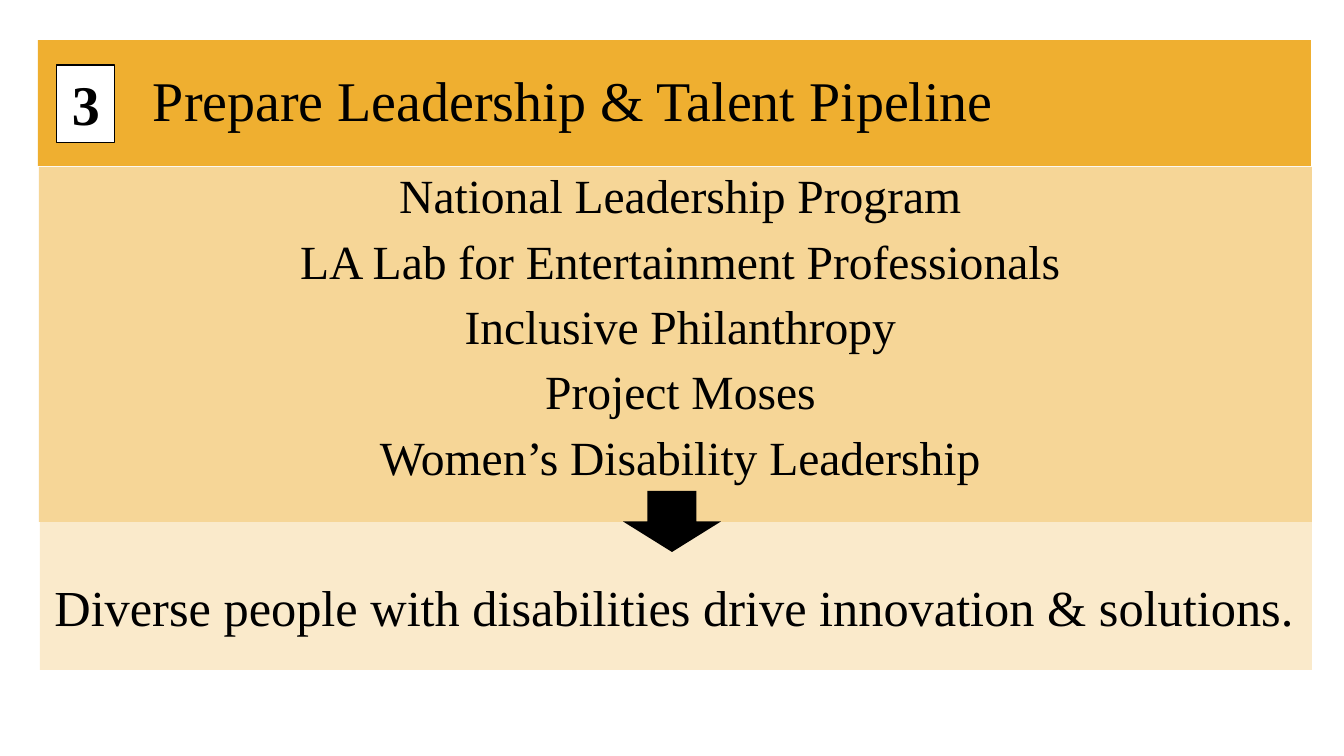
from lxml import etree
from pptx import Presentation
from pptx.dml.color import RGBColor
from pptx.enum.shapes import MSO_SHAPE as Preset
from pptx.enum.text import MSO_ANCHOR as Anchor, PP_ALIGN as Align
from pptx.oxml.ns import qn
from pptx.util import Pt

PX = 914400 / 100.8
GOLD, BLACK, WHITE = "EFAF30", "000000", "FFFFFF"
FONT = "Times New Roman"
PROGRAMS = [
    "National Leadership Program",
    "LA Lab for Entertainment Professionals",
    "Inclusive Philanthropy",
    "Project Moses",
    "Women’s Disability Leadership",
]


def px(*lengths):
    return [round(length * PX) for length in lengths]


def paint(color_format, color):
    color_format.rgb = RGBColor.from_string(color)


def set_all(target, values):
    for name, value in values.items():
        setattr(target, name, value)


def add_block(slide, preset, box, color, opacity=100):
    block = slide.shapes.add_shape(preset, *px(*box))
    block.shadow.inherit = False
    block.fill.solid()
    paint(block.fill.fore_color, color)
    block.line.fill.background()
    if opacity < 100:
        srgb = block.fill._xPr.find(".//" + qn("a:srgbClr"))
        etree.SubElement(srgb, qn("a:alpha"), val=str(opacity * 1000))
    return block


def write(shape, lines, size, anchor=Anchor.TOP, bold=False, gap=0, **layout):
    """Fill a shape with one paragraph a line, with gap points between them."""
    frame = shape.text_frame
    set_all(frame, {"word_wrap": True, "vertical_anchor": anchor})
    for index, line in enumerate(lines):
        paragraph = frame.add_paragraph() if index else frame.paragraphs[0]
        run = paragraph.add_run()
        run.text = line
        set_all(paragraph, {"alignment": Align.CENTER, **layout})
        if index and gap:
            paragraph.space_before = Pt(gap)
        set_all(run.font, {"name": FONT, "size": Pt(size), "bold": bold})
        paint(run.font.color, BLACK)


def add_text(slide, box, lines, size, **layout):
    write(slide.shapes.add_textbox(*px(*box)), lines, size, **layout)


def add_badge(slide, box, number):
    badge = add_block(slide, Preset.RECTANGLE, box, WHITE)
    paint(badge.line.color, BLACK)
    badge.line.width = Pt(0.75)
    write(badge, [number], 40, bold=True)


def main():
    deck = Presentation()
    deck.slide_width, deck.slide_height = px(1344, 756)
    slide = deck.slides.add_slide(deck.slide_layouts[6])

    add_block(slide, Preset.RECTANGLE, (38, 40, 1273, 126), GOLD)
    add_block(slide, Preset.RECTANGLE, (40, 522, 1272, 148), GOLD, 25)
    add_block(slide, Preset.RECTANGLE, (39, 167, 1273, 355), GOLD, 50)
    add_block(slide, Preset.DOWN_ARROW, (623, 491, 98, 61), BLACK)

    add_text(slide, (143, 40, 1074, 126), ["Prepare Leadership & Talent Pipeline"], 40,
             anchor=Anchor.MIDDLE, alignment=Align.LEFT, line_spacing=0.9)
    add_badge(slide, (57, 65, 58, 78), "3")
    add_text(slide, (88, 180, 1185, 298), PROGRAMS, 34,
             anchor=Anchor.MIDDLE, gap=10, line_spacing=0.9)
    add_text(slide, (38, 571, 1273, 72),
             ["Diverse people with disabilities drive innovation & solutions."], 36)

    deck.save("out.pptx")


if __name__ == "__main__":
    main()
